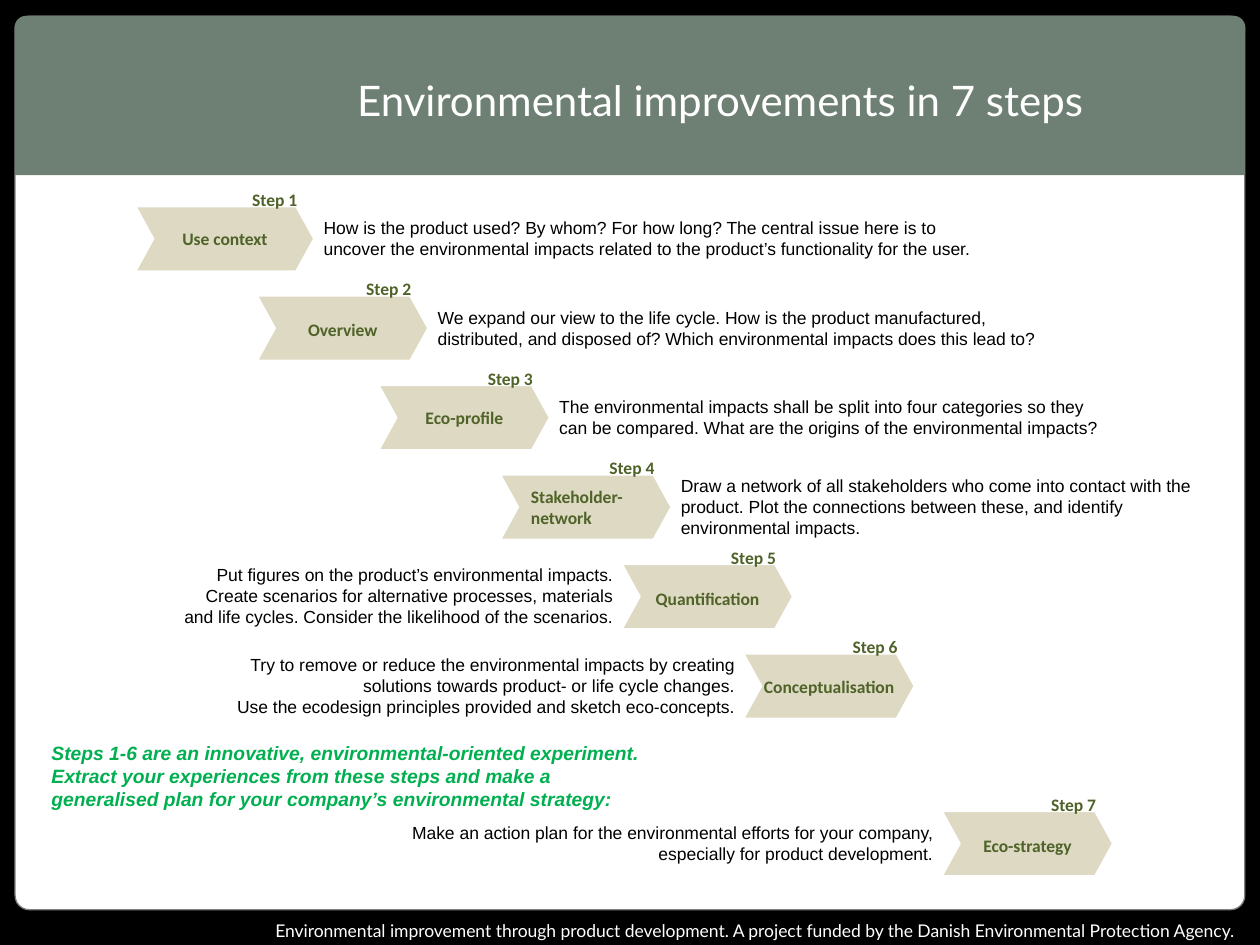
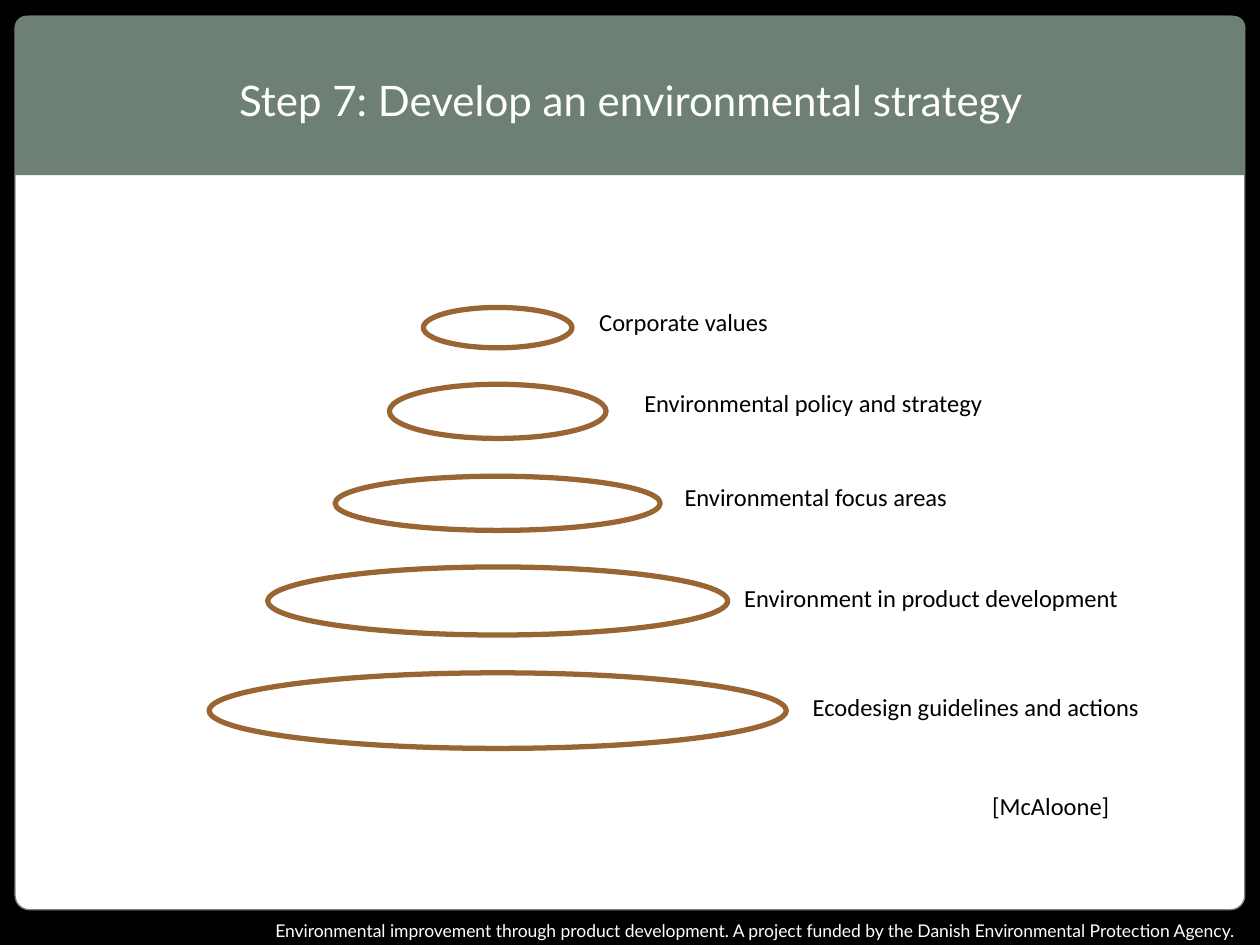
from pptx import Presentation
from pptx import util as u
from pptx.dml.color import RGBColor
from pptx.enum import shapes, text

COLOURS = {
    "black": "000000", "white": "FFFFFF", "edge": "808080", "band": "6E8073",
    "sand": "DDD9C3", "olive": "4F6228", "green": "00B050", "brown": "996633",
}
FOOTER = ("Environmental improvement through product development. "
          "A project funded by the Danish Environmental Protection Agency.")
ALIGN = {"left": text.PP_ALIGN.LEFT, "center": text.PP_ALIGN.CENTER,
         "right": text.PP_ALIGN.RIGHT}
SHAPE = shapes.MSO_SHAPE

deck = Presentation()
deck.slide_width, deck.slide_height = u.Inches(10), u.Inches(7.5)
COLUMN = deck.slide_width / 10
ROW = deck.slide_height / 7.5


def draw(page, kind, left, top, width, height, fill=None, line=None, weight=0.75, adjust=None):
    """Place a shape on the column and row grid; kind None gives a text box."""
    area = [int(n) for n in (left * COLUMN, top * ROW, width * COLUMN, height * ROW)]
    if kind is None:
        return page.shapes.add_textbox(*area)
    shape = page.shapes.add_shape(kind, *area)
    shape.shadow.inherit = False
    if adjust is not None:
        shape.adjustments[0] = adjust
    if fill:
        shape.fill.solid()
        shape.fill.fore_color.rgb = RGBColor.from_string(COLOURS[fill])
    else:
        shape.fill.background()
    if line:
        shape.line.color.rgb = RGBColor.from_string(COLOURS[line])
        shape.line.width = u.Pt(weight)
    else:
        shape.line.fill.background()
    return shape


def write(box, words, size=10, font="Calibri", colour="black", align="left", bold=False,
          italic=False, wrap=True, middle=False, spacing=None, sides=0.1, ends=0.05):
    frame = box.text_frame
    frame.word_wrap = wrap
    frame.vertical_anchor = text.MSO_ANCHOR.MIDDLE if middle else text.MSO_ANCHOR.TOP
    frame.margin_left = frame.margin_right = u.Inches(sides)
    frame.margin_top = frame.margin_bottom = u.Inches(ends)
    frame.text = words
    for para in frame.paragraphs:
        para.alignment = ALIGN[align]
        if spacing:
            para.line_spacing = spacing
        for span in para.runs:
            span.font.size = u.Pt(size)
            span.font.name = font
            span.font.bold = bold
            span.font.italic = italic
            span.font.color.rgb = RGBColor.from_string(COLOURS[colour])


# Frame, title and footer of both slides
titles = [
    ("Environmental improvements in 7 steps", 1.61, 8.21),
    ("Step 7: Develop an environmental strategy", 0.09, 9.83),
]
pages = []
for title, left, width in titles:
    page = deck.slides.add_slide(deck.slide_layouts[6])
    draw(page, SHAPE.RECTANGLE, 0, 0, 10, 7.5, "black")
    draw(page, SHAPE.ROUNDED_RECTANGLE, 0.12, 0.13, 9.76, 7.09, "white", "edge", adjust=0.016)
    draw(page, SHAPE.RECTANGLE, 0.12, 0.21, 9.76, 1.18, "band")
    draw(page, SHAPE.ROUNDED_RECTANGLE, 0.12, 0.13, 9.76, 0.18, "band", "band", adjust=0.5)
    write(draw(page, None, 0.2, 7.25, 9.69, 0.27), FOOTER,
          font="Lato", colour="white", align="right")
    write(draw(page, None, left, 0.36, width, 0.87), title,
          size=24, font="Lato", colour="white", align="center", middle=True)
    pages.append(page)
steps_page, strategy_page = pages

# Slide 1: a staircase of seven steps; explanations move to the left from step 5
steps = [
    ("Use context", 5.41, None,
     "How is the product used? By whom? For how long? The central issue here is to "
     "uncover the environmental impacts related to the product’s functionality for the user."),
    ("Overview", 5.06, 1.15,
     "We expand our view to the life cycle. How is the product manufactured, "
     "distributed, and disposed of? Which environmental impacts does this lead to?"),
    ("Eco-profile", 4.57, None,
     "The environmental impacts shall be split into four categories so they "
     "can be compared. What are the origins of the environmental impacts?"),
    ("Stakeholder-\nnetwork", 4.37, None,
     "Draw a network of all stakeholders who come into contact with the "
     "product. Plot the connections between these, and identify environmental impacts."),
    ("Quantification", 3.63, 1.15,
     "Put figures on the product’s environmental impacts. "
     "Create scenarios for alternative processes, materials "
     "and life cycles. Consider the likelihood of the scenarios."),
    ("Conceptualisation", 4.28, None,
     "Try to remove or reduce the environmental impacts by creating "
     "solutions towards product- or life cycle changes.\n"
     "Use the ecodesign principles provided and sketch eco-concepts."),
    ("Eco-strategy", 4.71, 1.15,
     "Make an action plan for the environmental efforts for your company, "
     "especially for product development."),
]
for number, (name, width, spacing, explanation) in enumerate(steps, 1):
    left, top = 1.08 + 0.965 * (number - 1), 1.64 + 0.71 * (number - 1)
    if number == 7:
        left, top = 7.48, 6.44
    chevron_width = 1.41 if number == 1 else 1.35
    right = left + chevron_width
    two_lines = "\n" in name

    chevron = draw(steps_page, SHAPE.CHEVRON, left, top, chevron_width, 0.51,
                   "sand", "white", adjust=0.275)
    write(chevron, name, colour="olive", bold=True, middle=True, spacing=spacing,
          align="left" if two_lines else "center", sides=0.1 if two_lines else 0, ends=0.04)
    write(draw(steps_page, None, right - 0.6, top - 0.19, 0.58, 0.28), f"Step {number}",
          colour="olive", bold=True, align="center", wrap=False)
    beside = right - 0.02 if number < 5 else left + 0.02 - width
    write(draw(steps_page, None, beside, top, width, 0.5), explanation, font="Arial",
          align="left" if number < 5 else "right", middle=True)

write(draw(steps_page, None, 0.31, 5.83, 4.92, 0.66),
      "Steps 1-6 are an innovative, environmental-oriented experiment. "
      "Extract your experiences from these steps and make a "
      "generalised plan for your company’s environmental strategy:",
      size=11, font="Arial", colour="green", bold=True, italic=True, middle=True)

# Slide 2: rings on one axis, widening downwards, each with a label
AXIS = 3.95
rings = [
    # top, width, height, label, label left, label top, label width
    (2.44, 1.18, 0.32, "Corporate values", 4.65, 2.39, 1.55),
    (3.05, 1.72, 0.43, "Environmental policy and strategy", 5, 3.03, 2.91),
    (3.78, 2.58, 0.43, "Environmental focus areas", 5.32, 3.78, 2.31),
    (4.5, 3.65, 0.54, "Environment in product development", 5.79, 4.58, 3.2),
    (5.34, 4.58, 0.6, "Ecodesign guidelines and actions", 6.32, 5.44, 2.85),
]
labels = [ring[3:] for ring in rings] + [("[McAloone]", 7.77, 6.23, 1.14)]
for top, width, height, *_ in rings:
    draw(strategy_page, SHAPE.OVAL, AXIS - width / 2, top, width, height,
         line="brown", weight=3)
for label, left, top, width in labels:
    write(draw(strategy_page, None, left, top, width, 0.34), label,
          size=14, align="center", wrap=False)

deck.save("out.pptx")
